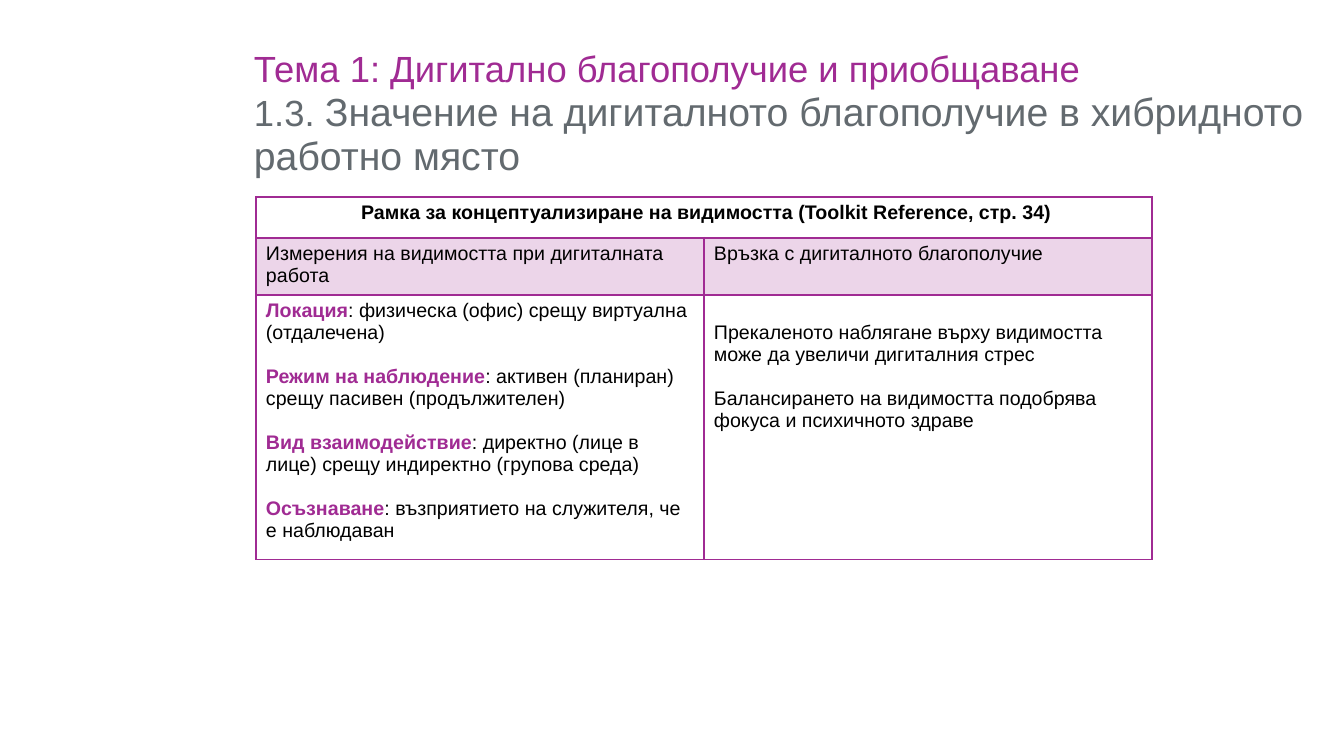
from dataclasses import dataclass

from lxml import etree
from pptx import Presentation
from pptx.dml.color import RGBColor
from pptx.enum.text import PP_ALIGN
from pptx.oxml.ns import qn
from pptx.util import Emu, Pt

CENTER, LEFT = PP_ALIGN.CENTER, PP_ALIGN.LEFT


@dataclass(frozen=True)
class Theme:
    font: str = "Arial"
    accent: str = "A02B93"
    tint: str = "ECD5E9"
    grey: str = "636A6F"
    ink: str = "000000"
    white: str = "FFFFFF"
    topic_size: int = 26
    subtitle_size: int = 28
    table_size: int = 14
    border: int = 1
    heavy_border: int = 2


THEME = Theme()

TOPIC = "Тема 1: Дигитално благополучие и приобщаване"
SECTION_NUMBER = "1.3. "
SECTION = "Значение на дигиталното благополучие в хибридното работно място"

FRAMEWORK = "Рамка за концептуализиране на видимостта (Toolkit Reference, стр. 34)"
HEADINGS = ["Измерения на видимостта при дигиталната работа",
            "Връзка с дигиталното благополучие"]
DIMENSIONS = [
    ("Локация", ": физическа (офис) срещу виртуална (отдалечена)"),
    ("Режим на наблюдение", ": активен (планиран) срещу пасивен (продължителен)"),
    ("Вид взаимодействие", ": директно (лице в лице) срещу индиректно (групова среда)"),
    ("Осъзнаване", ": възприятието на служителя, че е наблюдаван"),
]
EFFECTS = [
    "Прекаленото наблягане върху видимостта може да увеличи дигиталния стрес",
    "Балансирането на видимостта подобрява фокуса и психичното здраве",
]

# Lengths in px
SLIDE_SIZE = (1344, 756)
TITLE_BOX = (244, 44, 1087, 103)
TABLE_ORIGIN = (256, 197)
COLUMN_WIDTH = 448
ROW_HEIGHTS = [41, 54, 252]
PAD_X, PAD_Y = 10, 5
LINE = 22


def px(length):
    return Emu(round(length * 914400 / 100.8))


def style(font, size, color, bold=False):
    font.name, font.size, font.bold = THEME.font, Pt(size), bold
    font.color.rgb = RGBColor.from_string(color)


def add_title(slide):
    frame = slide.shapes.add_textbox(*map(px, TITLE_BOX)).text_frame
    frame.word_wrap = True
    frame.margin_left = frame.margin_right = px(PAD_X)
    frame.margin_top = frame.margin_bottom = px(PAD_Y)
    topic, section = frame.paragraphs[0], frame.add_paragraph()
    topic.text = TOPIC
    style(topic.font, THEME.topic_size, THEME.accent)
    for words, size in ((SECTION_NUMBER, THEME.topic_size),
                        (SECTION, THEME.subtitle_size)):
        run = section.add_run()
        run.text = words
        style(run.font, size, THEME.grey)
    for paragraph in (topic, section):
        paragraph.line_spacing = 0.95


def set_borders(cell, **widths):
    """Outline a cell; widths give points for any of lnL, lnR, lnT, lnB."""
    properties = cell._tc.get_or_add_tcPr()
    for position, side in enumerate(("lnL", "lnR", "lnT", "lnB")):
        line = etree.Element(qn(f"a:{side}"),
                             w=str(Pt(widths.get(side, THEME.border))))
        fill = etree.SubElement(line, qn("a:solidFill"))
        etree.SubElement(fill, qn("a:srgbClr"), val=THEME.accent)
        properties.insert(position, line)


def fill_cell(cell, entries, align=LEFT, bold=False):
    """Write one paragraph per entry; an entry is (accent term, plain text)."""
    for index, (term, words) in enumerate(entries):
        frame = cell.text_frame
        paragraph = frame.add_paragraph() if index else frame.paragraphs[0]
        paragraph.alignment = align
        if index:
            paragraph.space_before = px(LINE)
        style(paragraph.font, THEME.table_size, THEME.ink, bold)
        if term:
            run = paragraph.add_run()
            run.text = term
            style(run.font, THEME.table_size, THEME.accent, True)
        run = paragraph.add_run()
        run.text = words
        style(run.font, THEME.table_size, THEME.ink, bold)


def add_framework_table(slide):
    table = slide.shapes.add_table(
        len(ROW_HEIGHTS), len(HEADINGS), *map(px, TABLE_ORIGIN),
        px(COLUMN_WIDTH * len(HEADINGS)), px(sum(ROW_HEIGHTS))).table
    table.first_row = table.horz_banding = False
    for column in table.columns:
        column.width = px(COLUMN_WIDTH)
    for index, height in enumerate(ROW_HEIGHTS):
        table.rows[index].height = px(height)
        color = THEME.tint if index == 1 else THEME.white
        for cell in table.rows[index].cells:
            cell.fill.solid()
            cell.fill.fore_color.rgb = RGBColor.from_string(color)
            cell.margin_left = cell.margin_right = px(PAD_X)
            cell.margin_top = cell.margin_bottom = px(PAD_Y)
            heavy_sides = {0: "lnB", 1: "lnT"}
            set_borders(cell, **({heavy_sides[index]: THEME.heavy_border}
                                 if index in heavy_sides else {}))

    banner = table.cell(0, 0)
    banner.merge(table.cell(0, len(HEADINGS) - 1))
    banner.margin_left = px(PAD_X + 5)
    fill_cell(banner, [("", FRAMEWORK)], CENTER, True)
    for column, heading in enumerate(HEADINGS):
        fill_cell(table.cell(1, column), [("", heading)])
    fill_cell(table.cell(2, 0), DIMENSIONS)
    effects = table.cell(2, 1)
    effects.margin_top = px(PAD_Y + LINE)
    fill_cell(effects, [("", effect) for effect in EFFECTS])


def main():
    deck = Presentation()
    deck.slide_width, deck.slide_height = map(px, SLIDE_SIZE)
    slide = deck.slides.add_slide(deck.slide_layouts[6])
    add_title(slide)
    add_framework_table(slide)
    deck.save("out.pptx")


if __name__ == "__main__":
    main()
